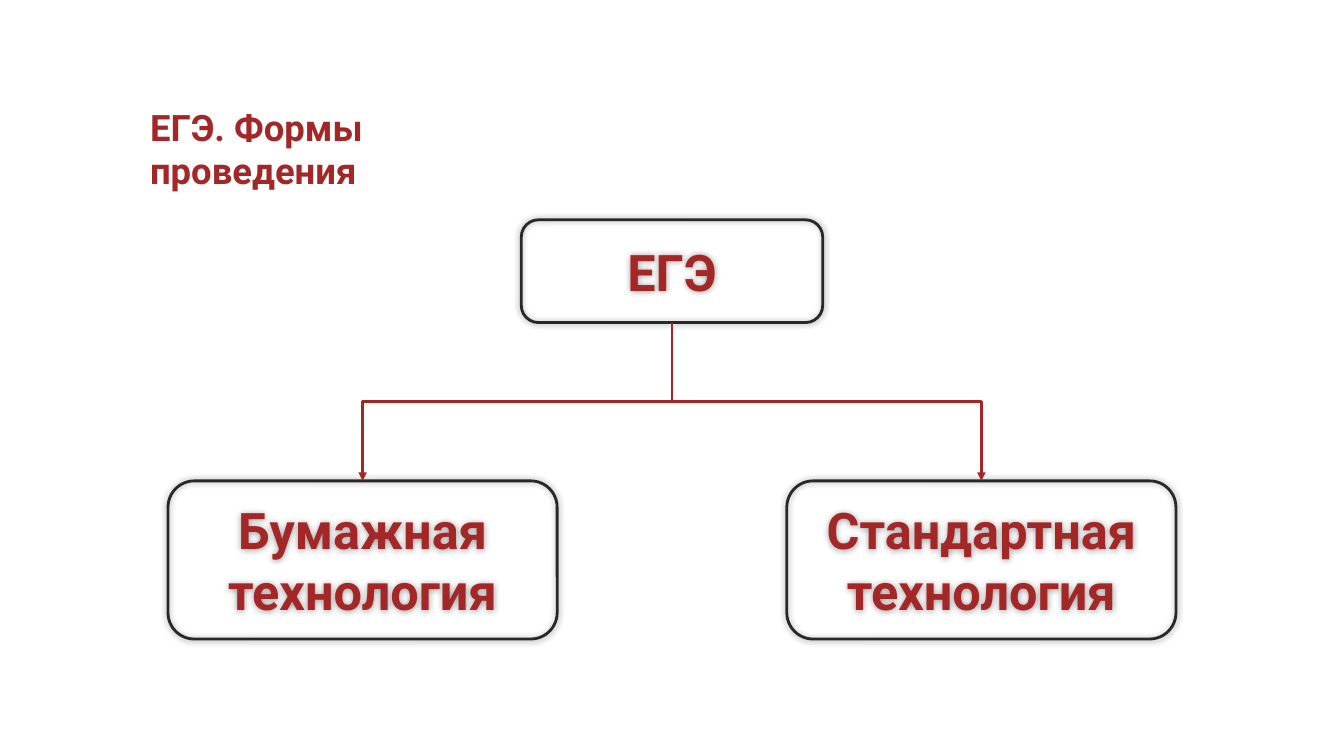
from lxml.etree import SubElement
from pptx import Presentation
from pptx.dml.color import RGBColor
from pptx.enum.shapes import MSO_CONNECTOR, MSO_SHAPE
from pptx.enum.text import MSO_ANCHOR, MSO_AUTO_SIZE, PP_ALIGN
from pptx.oxml.ns import qn
from pptx.util import Pt

RED = "A42727"
BLACK = "282828"
CENTER = 480
BRANCH_OFFSET = 221


def paint(color, hex_value):
    color.rgb = RGBColor.from_string(hex_value)


def write(shape, text, size=36, color=RED, font="Roboto", bold=True,
          align=PP_ALIGN.CENTER, anchor=MSO_ANCHOR.MIDDLE):
    frame = shape.text_frame
    frame.word_wrap = True
    frame.vertical_anchor = anchor
    paragraph = frame.paragraphs[0]
    paragraph.alignment = align
    run = paragraph.add_run()
    run.text = text
    run.font.name = font
    run.font.size = Pt(size)
    run.font.bold = bold
    paint(run.font.color, color)


def add_heading(slide, text):
    heading = slide.shapes.title
    heading.left, heading.top = Pt(100), Pt(71.3)
    heading.width, heading.height = Pt(313), Pt(70)
    write(heading, text, size=26, align=PP_ALIGN.LEFT, anchor=MSO_ANCHOR.TOP)
    heading.text_frame.auto_size = MSO_AUTO_SIZE.SHAPE_TO_FIT_TEXT


def add_glow_shadow(shape):
    shape.shadow.inherit = False
    effects = shape._element.spPr.find(qn("a:effectLst"))
    shadow = SubElement(effects, qn("a:outerShdw"), blurRad=str(Pt(5)),
                        dist="0", dir="0", algn="ctr", rotWithShape="0")
    color = SubElement(shadow, qn("a:srgbClr"), val="000000")
    SubElement(color, qn("a:alpha"), val="40000")


def add_node(slide, text, center, top, width, height):
    node = slide.shapes.add_shape(
        MSO_SHAPE.ROUNDED_RECTANGLE,
        Pt(center - width / 2), Pt(top), Pt(width), Pt(height))
    node.fill.background()
    node.line.width = Pt(2)
    paint(node.line.color, BLACK)
    add_glow_shadow(node)
    write(node, text)
    return node


def add_branch(slide, parent, child):
    branch = slide.shapes.add_connector(MSO_CONNECTOR.ELBOW, 0, 0, 0, 0)
    branch.begin_connect(parent, 2)
    branch.end_connect(child, 0)
    start_x, end_x = branch.begin_x, branch.end_x
    start_y, end_y = branch.begin_y, branch.end_y
    drop, spread = end_y - start_y, abs(end_x - start_x)
    branch.left = (start_x + end_x - drop) // 2
    branch.top = (start_y + end_y - spread) // 2
    branch.width, branch.height = drop, spread

    goes_right = end_x > start_x
    properties = branch._element.spPr
    transform = properties.find(qn("a:xfrm"))
    transform.set("rot", "16200000" if goes_right else "5400000")
    transform.set("flipH", "1" if goes_right else "0")
    transform.set("flipV", "0")

    branch.line.width = Pt(2)
    paint(branch.line.color, RED)
    SubElement(branch.line._get_or_add_ln(), qn("a:tailEnd"), type="triangle")
    SubElement(properties, qn("a:effectLst"))


def main():
    deck = Presentation()
    deck.slide_width, deck.slide_height = Pt(960), Pt(540)
    slide = deck.slides.add_slide(deck.slide_layouts[5])

    add_heading(slide, "ЕГЭ. Формы проведения")
    exam = add_node(slide, "ЕГЭ", CENTER, 157, 215.3, 73.4)
    technologies = [
        add_node(slide, text, CENTER + side * BRANCH_OFFSET, 343.5, 278, 113)
        for side, text in ((-1, "Бумажная технология"),
                           (1, "Стандартная технология"))
    ]
    for technology in reversed(technologies):
        add_branch(slide, exam, technology)

    deck.save("out.pptx")


if __name__ == "__main__":
    main()
